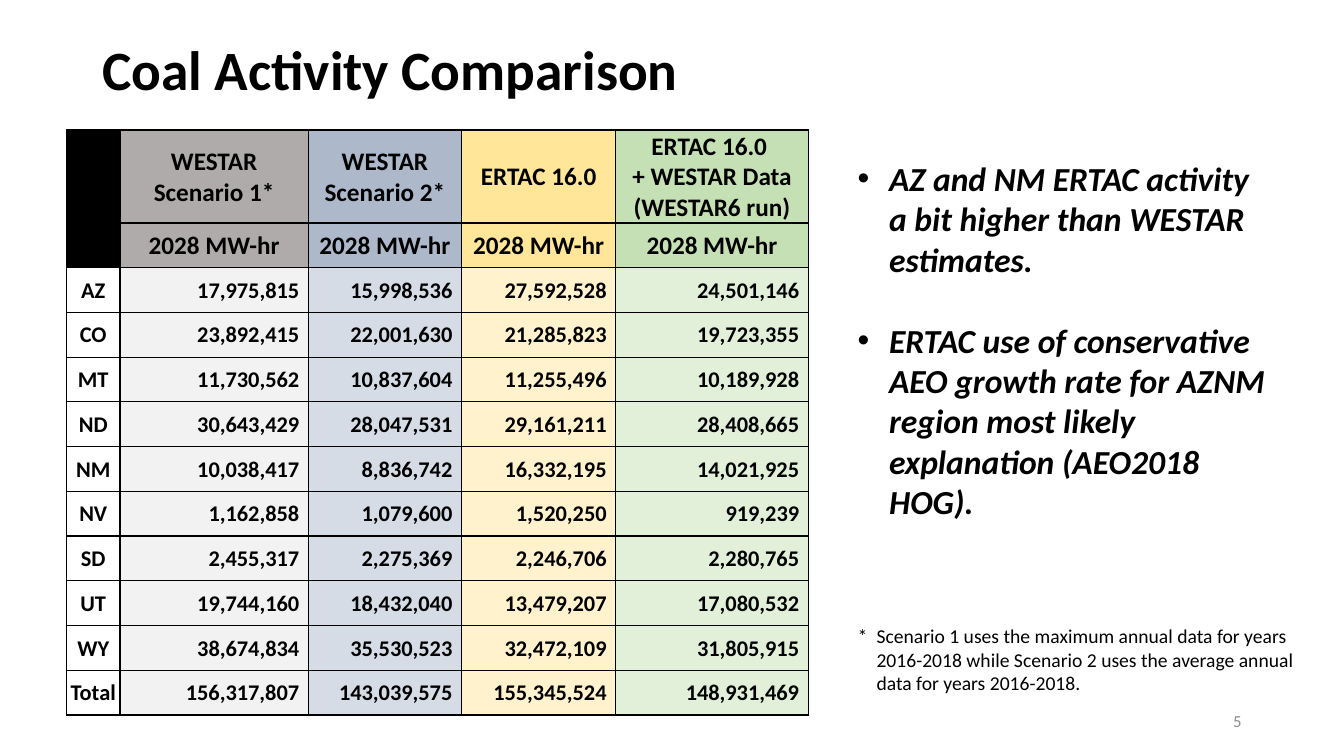
from lxml.etree import SubElement
from pptx import Presentation
from pptx.dml.color import RGBColor
from pptx.enum.text import MSO_ANCHOR as Anchor, PP_ALIGN as Align
from pptx.oxml import parse_xml
from pptx.oxml.ns import nsdecls, qn
from pptx.util import Pt

FONT = "Calibri"
BLACK = "000000"
COLUMN_WIDTHS = [38.2, 134.6, 109.4, 110.2, 137.5]
HEADER_HEIGHT, ROW_HEIGHT = 66.4, 31.95
HEADER_FILLS = [BLACK, "AFABAB", "ADB9CA", "FFE699", "C5E0B4"]
BODY_FILLS = [None, "F2F2F2", "D6DCE5", "FFF2CC", "E2F0D9"]
HEADERS = [
    ["", "WESTAR\nScenario 1*", "WESTAR\nScenario 2*", "ERTAC 16.0",
     "ERTAC 16.0 \v+ WESTAR Data\n(WESTAR6 run)"],
    [""] + ["2028 MW-hr"] * 4,
]
ACTIVITY = [
    ("AZ", 17975815, 15998536, 27592528, 24501146),
    ("CO", 23892415, 22001630, 21285823, 19723355),
    ("MT", 11730562, 10837604, 11255496, 10189928),
    ("ND", 30643429, 28047531, 29161211, 28408665),
    ("NM", 10038417, 8836742, 16332195, 14021925),
    ("NV", 1162858, 1079600, 1520250, 919239),
    ("SD", 2455317, 2275369, 2246706, 2280765),
    ("UT", 19744160, 18432040, 13479207, 17080532),
    ("WY", 38674834, 35530523, 32472109, 31805915),
    ("Total", 156317807, 143039575, 155345524, 148931469),
]
FINDINGS = (
    "AZ and NM ERTAC activity a bit higher than WESTAR estimates.\n"
    "ERTAC use of conservative AEO growth rate for AZNM region most likely "
    "explanation (AEO2018 HOG)."
)
FOOTNOTE = (
    "*\tScenario 1 uses the maximum annual data for years 2016-2018 while "
    "Scenario 2 uses the average annual data for years 2016-2018."
)


def rgb(color):
    """Turn a hex string into a colour."""
    return RGBColor.from_string(color)


def format_text(text_frame, size, color=BLACK, bold=False, italic=False, align=Align.LEFT):
    """Give every paragraph and run of a text frame the same look."""
    for paragraph in text_frame.paragraphs:
        paragraph.alignment = align
        for run in paragraph.runs:
            font = run.font
            font.name, font.size = FONT, Pt(size)
            font.bold, font.italic = bold, italic
            font.color.rgb = rgb(color)


def add_text(slide, text, left, top, width, height, size, anchor=Anchor.TOP, **style):
    """Add a wrapping text box and return its text frame."""
    shape = slide.shapes.add_textbox(Pt(left), Pt(top), Pt(width), Pt(height))
    text_frame = shape.text_frame
    text_frame.word_wrap = True
    text_frame.vertical_anchor = anchor
    text_frame.text = text
    format_text(text_frame, size, **style)
    return text_frame


def hang(paragraph, indent, bullet=None):
    """Set a hanging indent, with a bullet if one is given."""
    properties = paragraph._p.get_or_add_pPr()
    properties.set("marL", str(Pt(indent)))
    properties.set("indent", str(-Pt(indent)))
    if bullet:
        SubElement(properties, qn("a:buFont")).set("typeface", "Arial")
        SubElement(properties, qn("a:buChar")).set("char", bullet)


def add_borders(cell):
    """Draw a thin black line on all four sides of a cell."""
    properties = cell._tc.get_or_add_tcPr()
    for position, side in enumerate("LRTB"):
        properties.insert(position, parse_xml(
            f'<a:ln{side} {nsdecls("a")} w="{Pt(1)}"><a:solidFill>'
            f'<a:srgbClr val="{BLACK}"/></a:solidFill></a:ln{side}>'))


def fill_cell(cell, text, fill, size, align):
    """Write and style one table cell."""
    cell.margin_left = cell.margin_top = Pt(0.7)
    cell.margin_right = Pt(6.5 if align == Align.RIGHT else 0.7)
    cell.margin_bottom = Pt(0)
    cell.vertical_anchor = Anchor.MIDDLE
    cell.text_frame.text = text
    format_text(cell.text_frame, size, bold=True, align=align)
    if fill:
        cell.fill.solid()
        cell.fill.fore_color.rgb = rgb(fill)
    else:
        cell.fill.background()
    add_borders(cell)


def add_activity_table(slide, left, top):
    """Add the table of coal activity by state and scenario."""
    row_count = len(HEADERS) + len(ACTIVITY)
    height = HEADER_HEIGHT + ROW_HEIGHT * (row_count - 1)
    table = slide.shapes.add_table(
        row_count, len(COLUMN_WIDTHS), Pt(left), Pt(top),
        Pt(sum(COLUMN_WIDTHS)), Pt(height)).table
    table.first_row = table.horz_banding = False
    for column, width in zip(table.columns, COLUMN_WIDTHS):
        column.width = Pt(width)
    for index, row in enumerate(table.rows):
        row.height = Pt(ROW_HEIGHT if index else HEADER_HEIGHT)
    for row, texts in enumerate(HEADERS):
        for column, text in enumerate(texts):
            fill_cell(table.cell(row, column), text, HEADER_FILLS[column], 18, Align.CENTER)
    for row, (state, *values) in enumerate(ACTIVITY, len(HEADERS)):
        fill_cell(table.cell(row, 0), state, BODY_FILLS[0], 16, Align.CENTER)
        for column, value in enumerate(values, 1):
            fill_cell(table.cell(row, column), f"{value:,}", BODY_FILLS[column], 16, Align.RIGHT)


def add_findings(slide):
    """Add the two bulleted findings beside the table."""
    text_frame = add_text(slide, FINDINGS, 605.5, 109.4, 307.4, 269.3, 24,
                          bold=True, italic=True)
    for paragraph in text_frame.paragraphs:
        hang(paragraph, 22.5, "•")
    text_frame.paragraphs[1].space_before = Pt(29)


def main():
    """Build and save the slide."""
    presentation = Presentation()
    presentation.slide_width, presentation.slide_height = Pt(960), Pt(540)
    slide = presentation.slides.add_slide(presentation.slide_layouts[6])
    title = add_text(slide, "Coal Activity Comparison", 66, 28.8, 828, 45.4, 39.6,
                     Anchor.MIDDLE, bold=True)
    title.paragraphs[0].line_spacing = 0.9
    add_activity_table(slide, 47.5, 92.9)
    add_findings(slide)
    add_text(slide, "5", 678, 500.4, 216, 28.8, 12, Anchor.MIDDLE,
             color="8C8C8C", align=Align.RIGHT)
    footnote = add_text(slide, FOOTNOTE, 605.5, 442.1, 334.8, 58.3, 14)
    hang(footnote.paragraphs[0], 13.5)
    presentation.save("out.pptx")


if __name__ == "__main__":
    main()
